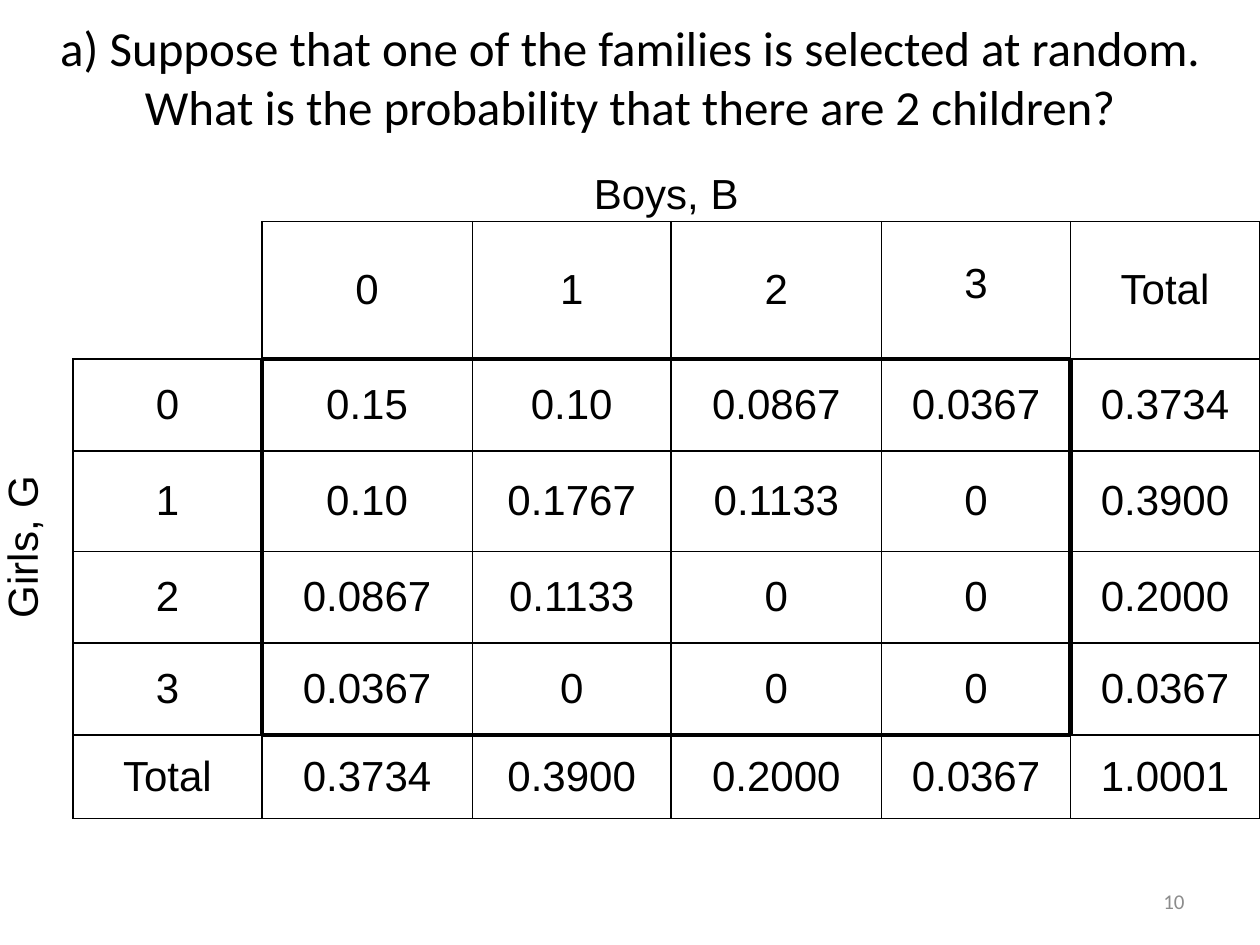
import pptx
import pptx.dml.color
import pptx.enum.text
import pptx.oxml
import pptx.oxml.ns
import pptx.util

Cm = pptx.util.Cm
Pt = pptx.util.Pt
ALIGN = pptx.enum.text.PP_ALIGN
ANCHOR = pptx.enum.text.MSO_ANCHOR

COLUMN_WIDTHS = [1.47, 3.81, 4.24, 4.01, 4.24, 3.81, 3.81]
ROW_HEIGHTS = [0.92, 2.77, 1.85, 2.03, 1.85, 1.85, 1.68]
ROWS = [
    ["", "", "Boys, B", "", "", "", ""],
    ["", "", "0", "1", "2", "3", "Total"],
    ["Girls, G", "0", "0.15", "0.10", "0.0867", "0.0367", "0.3734"],
    ["", "1", "0.10", "0.1767", "0.1133", "0", "0.3900"],
    ["", "2", "0.0867", "0.1133", "0", "0", "0.2000"],
    ["", "3", "0.0367", "0", "0", "0", "0.0367"],
    ["", "Total", "0.3734", "0.3900", "0.2000", "0.0367", "1.0001"],
]


def color(value):
    return pptx.dml.color.RGBColor.from_string(value)


def style_paragraph(paragraph, font_name, size, font_color, alignment):
    paragraph.alignment = alignment
    paragraph.font.name = font_name
    paragraph.font.size = Pt(size)
    paragraph.font.color.rgb = color(font_color)


def add_text(slide, text, left, top, width, height, size, font_color, alignment):
    shape = slide.shapes.add_textbox(Cm(left), Cm(top), Cm(width), Cm(height))
    frame = shape.text_frame
    frame.word_wrap = True
    frame.vertical_anchor = ANCHOR.MIDDLE
    frame.text = text
    style_paragraph(frame.paragraphs[0], "Calibri", size, font_color, alignment)


def is_bordered(row, column):
    if row == 1:
        return 2 <= column <= 6
    return 2 <= row <= 6 and 1 <= column <= 6


def is_joint_probability(row, column):
    return 2 <= row <= 5 and 2 <= column <= 5


def edge_width(position, neighbor):
    if is_joint_probability(*position) != is_joint_probability(*neighbor):
        return 3
    return 1 if is_bordered(*position) or is_bordered(*neighbor) else 0


def set_borders(cell, row, column):
    properties = cell._tc.get_or_add_tcPr()
    neighbors = {
        "lnL": (row, column - 1),
        "lnR": (row, column + 1),
        "lnT": (row - 1, column),
        "lnB": (row + 1, column),
    }
    for side, neighbor in neighbors.items():
        width = edge_width((row, column), neighbor)
        fill = '<a:solidFill><a:srgbClr val="000000"/></a:solidFill>' if width else "<a:noFill/>"
        namespace = pptx.oxml.ns.nsdecls("a")
        properties.append(pptx.oxml.parse_xml(
            f'<a:{side} {namespace} w="{Pt(width)}">{fill}</a:{side}>'))


def fill_cell(cell, text, row, column):
    cell.text = text
    cell.margin_left = cell.margin_right = Cm(0.18)
    cell.margin_top = cell.margin_bottom = 0
    cell.vertical_anchor = ANCHOR.MIDDLE if row else ANCHOR.TOP
    style_paragraph(cell.text_frame.paragraphs[0], "Arial", 24, "000000", ALIGN.CENTER)
    set_borders(cell, row, column)
    cell.fill.background()


def add_probability_table(slide):
    frame = slide.shapes.add_table(
        len(ROWS), len(COLUMN_WIDTHS), Cm(0), Cm(3.45),
        Cm(sum(COLUMN_WIDTHS)), Cm(sum(ROW_HEIGHTS)))
    table = frame.table
    table.first_row = False
    table.horz_banding = False
    for column, width in zip(table.columns, COLUMN_WIDTHS):
        column.width = Cm(width)
    for row, height in zip(table.rows, ROW_HEIGHTS):
        row.height = Cm(height)
    for row, texts in enumerate(ROWS):
        for column, text in enumerate(texts):
            fill_cell(table.cell(row, column), text, row, column)

    table.cell(0, 2).merge(table.cell(0, 5))
    girls_label = table.cell(2, 0)
    girls_label.merge(table.cell(5, 0))
    girls_label._tc.get_or_add_tcPr().set("vert", "vert270")
    three_boys = table.cell(1, 5)
    three_boys.vertical_anchor = ANCHOR.BOTTOM
    three_boys.margin_bottom = Cm(1.05)


def main():
    presentation = pptx.Presentation()
    presentation.slide_width = Cm(25.4)
    presentation.slide_height = Cm(19.05)
    slide = presentation.slides.add_slide(presentation.slide_layouts[6])
    add_text(slide, "a) Suppose that one of the families is selected at random. "
             "What is the probability that there are 2 children?",
             0, 0.76, 25.4, 1.57, 28, "000000", ALIGN.CENTER)
    add_probability_table(slide)
    add_text(slide, "10", 18.2, 17.65, 5.93, 1.02, 12, "8C8C8C", ALIGN.RIGHT)
    presentation.save("out.pptx")


if __name__ == "__main__":
    main()
